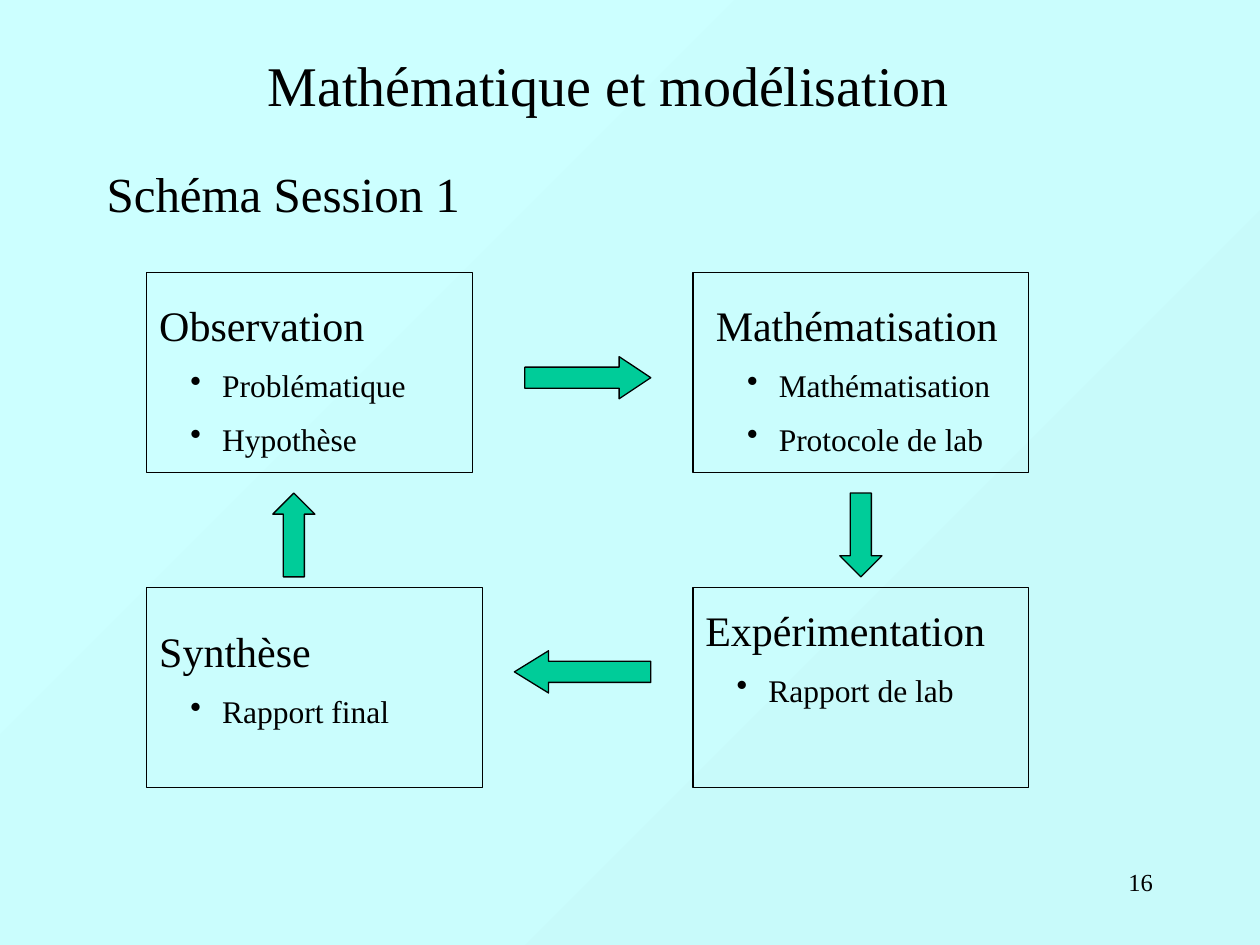
from dataclasses import dataclass

import pptx
import pptx.dml.color
import pptx.enum.shapes
import pptx.enum.text
import pptx.oxml
import pptx.oxml.ns
import pptx.util

Cm = pptx.util.Cm
RGB = pptx.dml.color.RGBColor
ARROW = pptx.enum.shapes.MSO_SHAPE
ALIGN = pptx.enum.text.PP_ALIGN


@dataclass(frozen=True)
class Theme:
    font: str = "Times New Roman"
    ink: RGB = RGB(0, 0, 0)
    arrow: RGB = RGB(0x00, 0xCC, 0x99)
    sky_start: RGB = RGB(0xCC, 0xFF, 0xFF)
    sky_end: RGB = RGB(0xC8, 0xFA, 0xFA)
    title: int = 32
    subtitle: int = 28
    heading: int = 24
    item: int = 18
    number: int = 14
    line: float = 0.75


THEME = Theme()


def add_property(paragraph, tag, content=""):
    xml = f'<a:{tag} {pptx.oxml.ns.nsdecls("a")} {content}'
    paragraph._p.get_or_add_pPr().append(pptx.oxml.parse_xml(xml))


def space_before(paragraph):
    """Leave half a line above the paragraph."""
    add_property(paragraph, "spcBef", '><a:spcPct val="50000"/></a:spcBef>')


def bullet(paragraph):
    paragraph.level = 1
    properties = paragraph._p.get_or_add_pPr()
    properties.set("marL", str(Cm(1.27)))
    properties.set("indent", str(-Cm(0.64)))
    add_property(paragraph, "buChar", 'char="•"/>')


def style(paragraph, size):
    font = paragraph.runs[0].font
    font.name = THEME.font
    font.size = pptx.util.Pt(size)
    font.color.rgb = THEME.ink


def add_text(slide, box, lines, size, align=ALIGN.LEFT, spaced=False):
    """Write the first line at the given size and the others as bullets."""
    frame = slide.shapes.add_textbox(*map(Cm, box)).text_frame
    frame.word_wrap = True
    frame.text = "\n".join(lines)
    for index, paragraph in enumerate(frame.paragraphs):
        paragraph.alignment = align
        if spaced:
            space_before(paragraph)
        if index:
            bullet(paragraph)
        style(paragraph, THEME.item if index else size)
    return frame


def add_outlined(slide, kind, box):
    shape = slide.shapes.add_shape(kind, *map(Cm, box))
    shape.shadow.inherit = False
    shape.line.color.rgb = THEME.ink
    shape.line.width = pptx.util.Pt(THEME.line)
    return shape


def add_stage(slide, box, lines, inset, text_width):
    """Frame one stage, with its text moved by inset from the corner."""
    left, top, width, height = box
    dx, dy = inset
    add_outlined(slide, ARROW.RECTANGLE, box).fill.background()
    add_text(slide, (left + dx, top + dy, text_width, height - dy),
             lines, THEME.heading, spaced=True)


def add_arrow(slide, kind, box, head):
    arrow = add_outlined(slide, kind, box)
    arrow.fill.solid()
    arrow.fill.fore_color.rgb = THEME.arrow
    arrow.adjustments[0] = 0.5
    arrow.adjustments[1] = head


def add_cycle(slide, box):
    """Draw the four stages and the arrows that lead round them."""
    left, top, width, height = box
    stage_width, stage_height = 6.77, 4.02
    right = left + width - stage_width
    bottom = top + height - stage_height
    stages = [
        (left, top, 6.56, (0, 0.42), 7.2,
         ["Observation", "Problématique", "Hypothèse"]),
        (right, top, stage_width, (0.21, 0.42), 6.56,
         ["Mathématisation", "Mathématisation", "Protocole de lab"]),
        (right, bottom, stage_width, (0, 0.21), 6.56,
         ["Expérimentation", "Rapport de lab"]),
        (left, bottom, stage_width, (0, 0.64), 6.56,
         ["Synthèse", "Rapport final"]),
    ]
    for x, y, frame_width, inset, text_width, lines in stages:
        add_stage(slide, (x, y, frame_width, stage_height), lines, inset, text_width)

    thick, rise = 0.85, 1.69
    gap_top = top + stage_height + 0.42
    arrows = [
        (ARROW.RIGHT_ARROW, (left + 7.62, top + 1.69, 2.54, thick), 0.75),
        (ARROW.DOWN_ARROW, (right + 2.96, gap_top, thick, rise), 0.5),
        (ARROW.LEFT_ARROW, (left + 7.41, bottom + 1.27, 2.75, thick), 0.81),
        (ARROW.UP_ARROW, (left + 2.54, gap_top, thick, rise), 0.5),
    ]
    for kind, arrow_box, head in arrows:
        add_arrow(slide, kind, arrow_box, head)


def paint_background(slide):
    fill = slide.background.fill
    fill.gradient()
    fill.gradient_angle = 315
    for stop, colour in zip(fill.gradient_stops, (THEME.sky_start, THEME.sky_end)):
        stop.color.rgb = colour


def main():
    deck = pptx.Presentation()
    deck.slide_width, deck.slide_height = Cm(25.4), Cm(19.05)
    slide = deck.slides.add_slide(deck.slide_layouts[6])
    paint_background(slide)
    title = add_text(slide, (1.48, 1.06, 21.59, 1.27),
                     ["Mathématique et modélisation"], THEME.title, ALIGN.CENTER)
    title.vertical_anchor = pptx.enum.text.MSO_ANCHOR.MIDDLE
    add_text(slide, (1.9, 3.18, 18.42, 1.45), ["Schéma Session 1"],
             THEME.subtitle, spaced=True)
    add_cycle(slide, (2.96, 5.5, 17.78, 10.37))
    add_text(slide, (18.2, 17.36, 5.29, 1.27), ["16"], THEME.number, ALIGN.RIGHT)
    deck.save("out.pptx")


if __name__ == "__main__":
    main()
